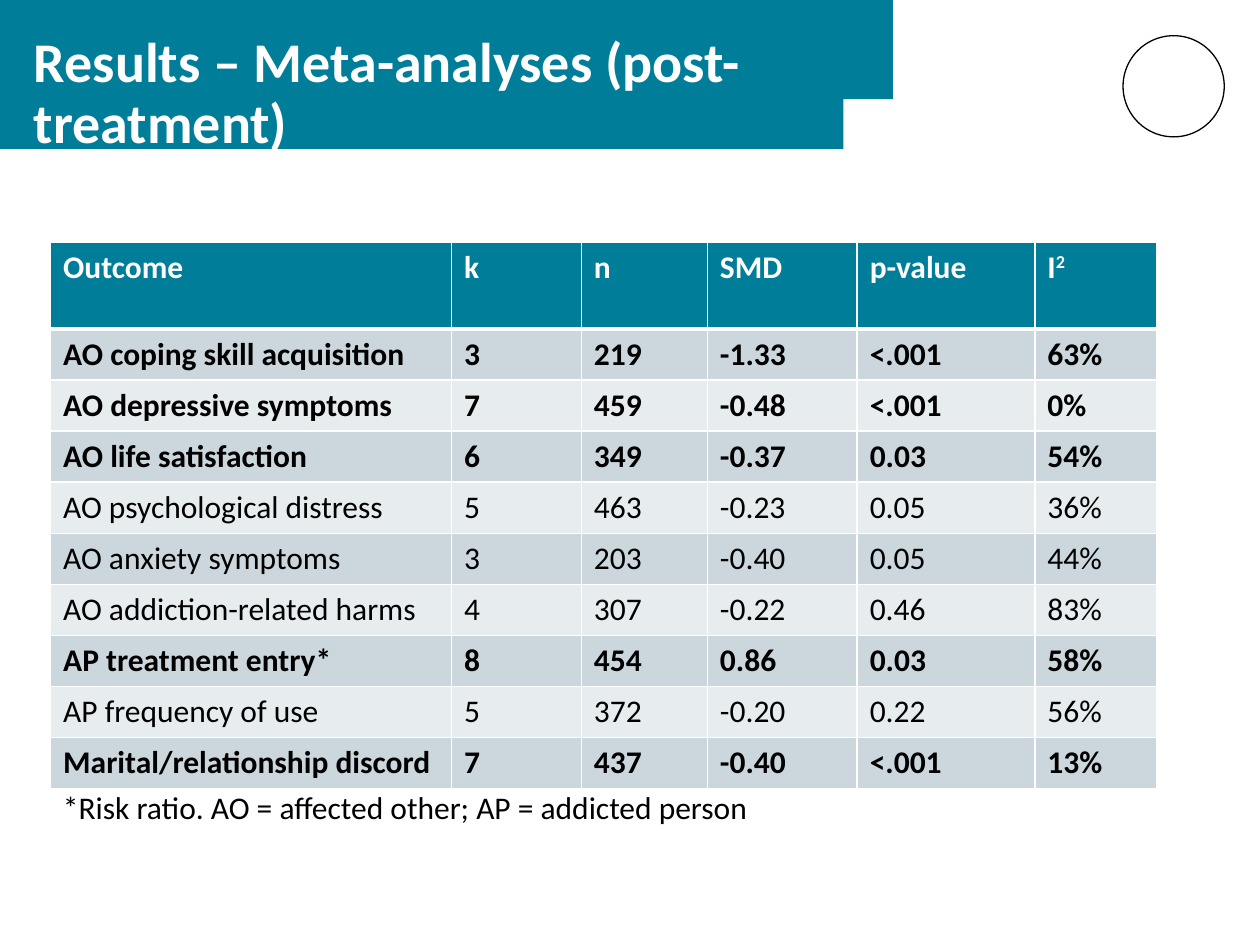
import math

from lxml import etree
from pptx import Presentation
from pptx import util as u
from pptx.dml.color import RGBColor
from pptx.enum import shapes, text
from pptx.oxml.ns import qn

COLORS = {
    "teal": "007D98",
    "band_dark": "CCD7DD",
    "band_light": "E7ECEF",
    "white": "FFFFFF",
    "black": "000000",
}
HEADER = ["Outcome", "k", "n", "SMD", "p-value", "I²"]
# Each row: significant result?, then the cell values
OUTCOMES = [
    (True, "AO coping skill acquisition", "3", "219", "-1.33", "<.001", "63%"),
    (True, "AO depressive symptoms", "7", "459", "-0.48", "<.001", "0%"),
    (True, "AO life satisfaction", "6", "349", "-0.37", "0.03", "54%"),
    (False, "AO psychological distress", "5", "463", "-0.23", "0.05", "36%"),
    (False, "AO anxiety symptoms", "3", "203", "-0.40", "0.05", "44%"),
    (False, "AO addiction-related harms", "4", "307", "-0.22", "0.46", "83%"),
    (True, "AP treatment entry*", "8", "454", "0.86", "0.03", "58%"),
    (False, "AP frequency of use", "5", "372", "-0.20", "0.22", "56%"),
    (True, "Marital/relationship discord", "7", "437", "-0.40", "<.001", "13%"),
]
COL_WIDTHS = [8.08, 2.62, 2.54, 3.02, 3.58, 2.46]
HEADER_HEIGHT, ROW_HEIGHT = 1.75, 1.02


def rgb(name):
    return RGBColor.from_string(COLORS[name])


class SlideBuilder:
    """Holds the slide and its text style; all lengths are in centimetres."""

    font_name = "Calibri"
    body_size = 18
    title_size = 32

    def __init__(self, slide):
        self.slide = slide

    def style(self, p, color, size=None, bold=False):
        p.font.name = self.font_name
        p.font.size = u.Pt(size or self.body_size)
        p.font.bold = bold
        p.font.color.rgb = rgb(color)

    def banner(self, width, height, radius, steps=40):
        """Strip from the top left corner with a rounded bottom right corner."""
        fb = self.slide.shapes.build_freeform(0, 0, scale=u.Cm(1))
        angles = [math.pi / 2 * i / steps for i in range(steps + 1)]
        arc = [(width - radius + radius * math.cos(a), height * math.sin(a))
               for a in angles]
        fb.add_line_segments(arc + [(0, height)], close=True)
        sp = fb.convert_to_shape()
        sp.shadow.inherit = False
        sp.fill.solid()
        sp.fill.fore_color.rgb = rgb("teal")
        sp.line.fill.background()

    def ring(self, left, top, diameter):
        sp = self.slide.shapes.add_shape(
            shapes.MSO_SHAPE.OVAL, u.Cm(left), u.Cm(top), u.Cm(diameter), u.Cm(diameter))
        sp.shadow.inherit = False
        sp.fill.background()
        sp.line.color.rgb = rgb("black")
        sp.line.width = u.Pt(0.75)

    def title(self, content, left, top, width, height):
        sp = self.slide.shapes.title
        sp.left, sp.top, sp.width, sp.height = map(u.Cm, (left, top, width, height))
        self.slide.shapes._spTree.append(sp._element)  # in front of the banner
        tf = sp.text_frame
        tf.text = content
        tf.word_wrap = True
        tf.auto_size = text.MSO_AUTO_SIZE.NONE
        tf.vertical_anchor = text.MSO_ANCHOR.TOP
        p = tf.paragraphs[0]
        p.alignment = text.PP_ALIGN.LEFT
        p.line_spacing = 0.9
        self.style(p, "white", self.title_size, bold=True)

    def borders(self, cell, **widths):
        tc_pr = cell._tc.get_or_add_tcPr()
        for side in "LRTB":
            ln = etree.SubElement(tc_pr, qn(f"a:ln{side}"),
                                  w=str(u.Pt(widths.get(side, 1))))
            fill = etree.SubElement(ln, qn("a:solidFill"))
            etree.SubElement(fill, qn("a:srgbClr"), val=COLORS["white"])

    def cell(self, cell, content, fill, color, bold, **widths):
        self.borders(cell, **widths)
        cell.fill.solid()
        cell.fill.fore_color.rgb = rgb(fill)
        p = cell.text_frame.paragraphs[0]
        base, squared, _ = content.partition("²")
        p.add_run().text = base
        if squared:
            r = p.add_run()
            r.text = "2"
            r.font._element.set("baseline", "30000")
        self.style(p, color, bold=bold)

    def results_table(self, left, top):
        height = HEADER_HEIGHT + ROW_HEIGHT * len(OUTCOMES)
        table = self.slide.shapes.add_table(
            len(OUTCOMES) + 1, len(HEADER), u.Cm(left), u.Cm(top),
            u.Cm(sum(COL_WIDTHS)), u.Cm(height)).table
        for column, width in zip(table.columns, COL_WIDTHS):
            column.width = u.Cm(width)
        for row in table.rows:
            row.height = u.Cm(ROW_HEIGHT)
        table.rows[0].height = u.Cm(HEADER_HEIGHT)
        for c, label in enumerate(HEADER):
            self.cell(table.cell(0, c), label, "teal", "white", True, B=3)
        for r, (significant, *values) in enumerate(OUTCOMES, 1):
            band = "band_dark" if r % 2 else "band_light"
            top_width = 3 if r == 1 else 1
            for c, value in enumerate(values):
                self.cell(table.cell(r, c), value, band, "black", significant,
                          T=top_width)

    def note(self, content, left, top, width, height):
        tf = self.slide.shapes.add_textbox(
            *map(u.Cm, (left, top, width, height))).text_frame
        tf.word_wrap = True
        tf.auto_size = text.MSO_AUTO_SIZE.SHAPE_TO_FIT_TEXT
        tf.text = content
        self.style(tf.paragraphs[0], "black")


def main():
    prs = Presentation()
    prs.slide_width, prs.slide_height = u.Cm(25.4), u.Cm(19.05)
    s = SlideBuilder(prs.slides.add_slide(prs.slide_layouts[5]))
    s.banner(18.26, 3.43, 3.36)
    s.ring(22.64, 0.72, 2.04)
    s.title("Results – Meta-analyses (post-treatment)", 0.43, 0.56, 17.75, 2.26)
    s.results_table(1.02, 4.88)
    s.note("*Risk ratio. AO = affected other; AP = addicted person",
           1.02, 15.77, 15.57, 1.02)
    prs.save("out.pptx")


if __name__ == "__main__":
    main()
